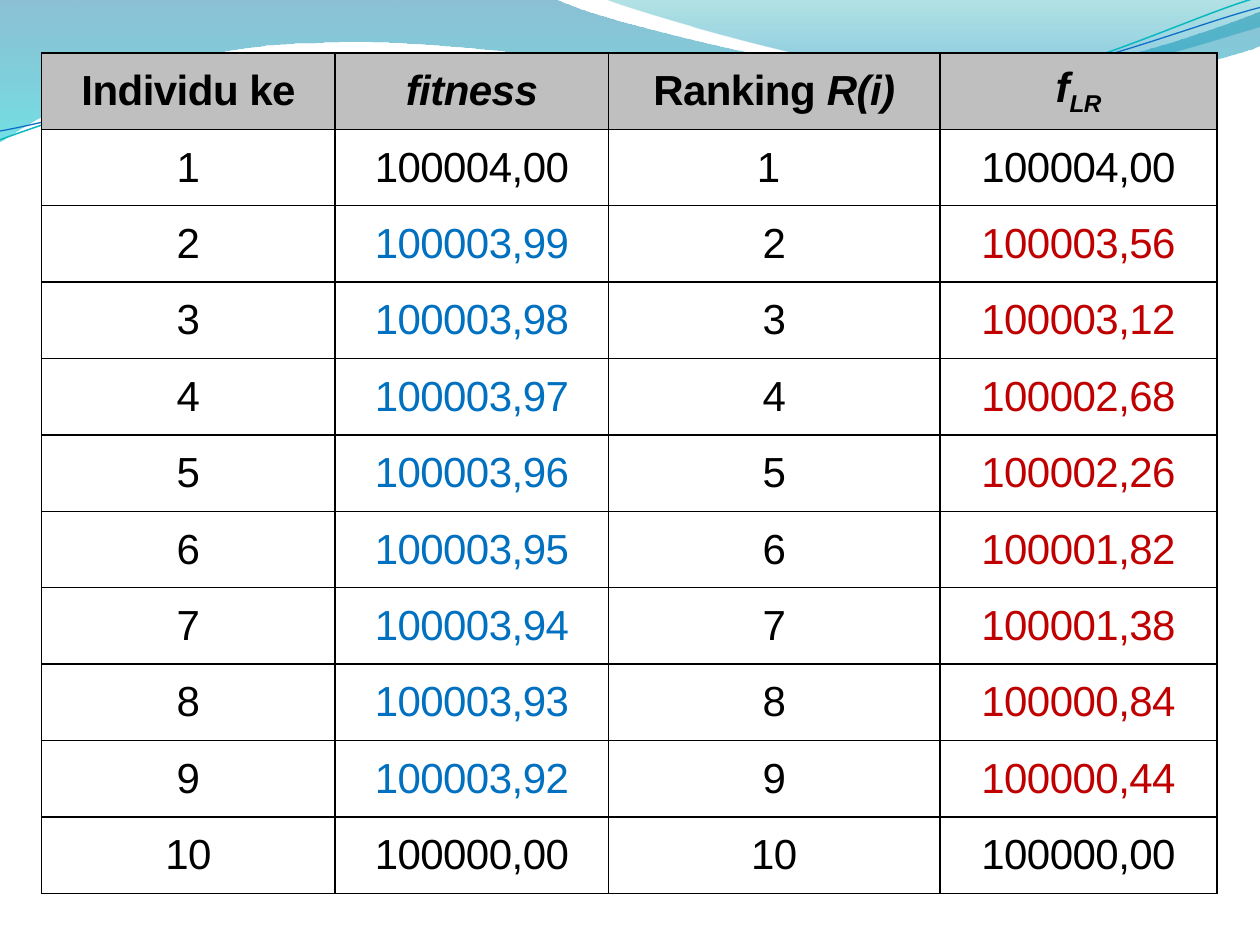
import math

import pptx
import pptx.dml.color
import pptx.enum.text
import pptx.oxml
import pptx.oxml.ns
import pptx.util

RGBColor = pptx.dml.color.RGBColor
BLACK = RGBColor(0x00, 0x00, 0x00)
HEADER_GREY = RGBColor(0xBF, 0xBF, 0xBF)
FITNESS_BLUE = RGBColor(0x00, 0x70, 0xC0)
RANKING_RED = RGBColor(0xC0, 0x00, 0x00)
DEEP_BLUE = RGBColor(0x00, 0x74, 0xA1)
CYAN = RGBColor(0x00, 0xC6, 0xCF)
TEAL = RGBColor(0x00, 0xA1, 0xA9)
SKY = RGBColor(0x00, 0x8B, 0xBF)
LINE_TEAL = RGBColor(0x0A, 0xB8, 0xBF)
LINE_BLUE = RGBColor(0x0F, 0x6F, 0xC6)

GRID = pptx.util.Inches(1)
SLIDE_COLUMNS, SLIDE_ROWS = 10, 7.5
FINENESS = 1000
STROKE_TILT = 2.7

LEFT_WAVE = [
    (0, -0.01), (4.4, -0.01),
    (4.76, 0.17, 6.64, 0.63, 7.58, 0.63), (8.53, 0.63, 9.58, 0.26, 10, 0.09),
    (10.01, 0.36),
    (9.83, 0.44, 8.7, 0.76, 7.46, 0.75), (6.22, 0.75, 3.82, 0.28, 2.57, 0.34),
    (1.29, 0.35, 0.46, 0.83, -0.01, 1.13),
]
RIGHT_WAVE = [
    (4.79, -0.01),
    (5.09, 0.11, 6.82, 0.62, 7.69, 0.65), (8.56, 0.69, 9.61, 0.32, 10, 0.21),
    (10, 0),
]
TEAL_STROKE = [
    (0, 1.11),
    (0.48, 0.93, 1.58, 0.57, 2.77, 0.52), (3.95, 0.47, 5.93, 0.89, 7.13, 0.8),
    (8.33, 0.71, 9.38, 0.15, 9.98, -0.02),
]
BLUE_STROKE = [
    (0, 1.04),
    (0.47, 0.96, 1.64, 0.61, 2.83, 0.56), (4.03, 0.51, 5.97, 0.83, 7.17, 0.75),
    (8.36, 0.67, 9.41, 0.21, 10, 0.06),
]

COLUMN_WIDTHS = [2.33, 2.17, 2.63, 2.2]
HEADINGS = [
    [("Individu ke", False, 0)],
    [("fitness", True, 0)],
    [("Ranking ", False, 0), ("R(i)", True, 0)],
    [("f", True, 0), ("LR", True, -25)],
]
FITNESS = ["100004,00", "100003,99", "100003,98", "100003,97", "100003,96",
           "100003,95", "100003,94", "100003,93", "100003,92", "100000,00"]
LINEAR_RANKING = ["100004,00", "100003,56", "100003,12", "100002,68", "100002,26",
                  "100001,82", "100001,38", "100000,84", "100000,44", "100000,00"]


def turn(point, center, degrees):
    angle = math.radians(degrees)
    across, down = point[0] - center[0], point[1] - center[1]
    return (center[0] + across * math.cos(angle) - down * math.sin(angle),
            center[1] + across * math.sin(angle) + down * math.cos(angle))


def draw_outline(slide, box, outline, closed, tilt=0, center=(0, 0)):
    left, top, width, _ = box
    unit = width / SLIDE_COLUMNS
    points = [turn(segment[i:i + 2], center, tilt)
              for segment in outline for i in range(0, len(segment), 2)]
    points = [((left + x * unit) * FINENESS, (top + y * unit) * FINENESS) for x, y in points]
    builder = slide.shapes.build_freeform(*points[0], scale=GRID / FINENESS)
    builder.add_line_segments(points[1:], close=closed)
    shape = builder.convert_to_shape()
    shape.shadow.inherit = False
    shape.rotation = -tilt
    bend_segments(shape, outline)
    return shape


def bend_segments(shape, outline):
    straight = iter(list(shape.element.spPr.iter(pptx.oxml.ns.qn("a:lnTo"))))
    for segment in outline[1:]:
        pieces = [next(straight) for _ in range(len(segment) // 2)]
        if len(pieces) == 1:
            continue
        curve = pptx.oxml.parse_xml(f'<a:cubicBezTo {pptx.oxml.ns.nsdecls("a")}/>')
        pieces[0].addprevious(curve)
        for piece in pieces:
            curve.append(piece[0])
            piece.getparent().remove(piece)


def add_wave(slide, box, outline, stops):
    wave = draw_outline(slide, box, outline, True)
    wave.line.fill.background()
    wave.fill.gradient()
    wave.fill.gradient_angle = 270
    for stop, (position, color, _) in zip(wave.fill.gradient_stops, stops):
        stop.position = position
        stop.color.rgb = color
    colors = list(wave.element.spPr.iter(pptx.oxml.ns.qn("a:srgbClr")))
    for color, (_, _, opacity) in zip(colors, stops):
        color.append(pptx.oxml.parse_xml(
            f'<a:alpha {pptx.oxml.ns.nsdecls("a")} val="{opacity * 1000}"/>'))


def add_stroke(slide, box, outline, center, color, width):
    stroke = draw_outline(slide, box, outline, False, STROKE_TILT, center)
    stroke.fill.background()
    stroke.line.color.rgb = color
    stroke.line.width = pptx.util.Pt(width)


def add_banner(slide, box):
    add_wave(slide, box, LEFT_WAVE, [(0, DEEP_BLUE, 45), (1, CYAN, 55)])
    add_wave(slide, box, RIGHT_WAVE, [(0, TEAL, 30), (0.8, SKY, 45)])
    add_stroke(slide, box, TEAL_STROKE, (4.99, 0.58), LINE_TEAL, 0.85)
    add_stroke(slide, box, BLUE_STROKE, (5, 0.59), LINE_BLUE, 0.75)


def add_borders(cell):
    properties = cell._tc.get_or_add_tcPr()
    for index, side in enumerate(("lnL", "lnR", "lnT", "lnB")):
        properties.insert(index, pptx.oxml.parse_xml(
            f'<a:{side} {pptx.oxml.ns.nsdecls("a")} w="12700"><a:solidFill>'
            f'<a:srgbClr val="{BLACK}"/></a:solidFill></a:{side}>'))


def fill_cell(cell, parts, color, heading):
    cell.vertical_anchor = pptx.enum.text.MSO_ANCHOR.MIDDLE
    cell.margin_left = cell.margin_right = int(0.07 * GRID)
    cell.margin_top = cell.margin_bottom = 0
    if heading:
        cell.fill.solid()
        cell.fill.fore_color.rgb = HEADER_GREY
    else:
        cell.fill.background()
    add_borders(cell)
    paragraph = cell.text_frame.paragraphs[0]
    paragraph.alignment = pptx.enum.text.PP_ALIGN.CENTER
    paragraph.space_before = pptx.util.Pt(3)
    for text, italic, baseline in parts:
        run = paragraph.add_run()
        run.text = text
        run.font.name = "Arial"
        run.font.size = pptx.util.Pt(24)
        run.font.bold = heading
        run.font.italic = italic
        run.font.color.rgb = color
        properties = run._r.get_or_add_rPr()
        properties.set("spc", "-30")
        if baseline:
            properties.set("baseline", str(baseline * 1000))


def add_ranking_table(slide, box):
    count = len(FITNESS)
    table = slide.shapes.add_table(
        count + 1, len(COLUMN_WIDTHS), *(int(length * GRID) for length in box)).table
    table.first_row = table.horz_banding = False
    for column, share in zip(table.columns, COLUMN_WIDTHS):
        column.width = int(box[2] * share / sum(COLUMN_WIDTHS) * GRID)
    for cell, parts in zip(table.rows[0].cells, HEADINGS):
        fill_cell(cell, parts, BLACK, True)
    for number, (fitness, ranked) in enumerate(zip(FITNESS, LINEAR_RANKING), 1):
        extreme = number in (1, count)
        rank = "1 " if number == 1 else str(number)
        texts = [str(number), fitness, rank, ranked]
        colors = [BLACK] * 4 if extreme else [BLACK, FITNESS_BLUE, BLACK, RANKING_RED]
        for cell, text, color in zip(table.rows[number].cells, texts, colors):
            fill_cell(cell, [(text, False, 0)], color, False)


def main():
    presentation = pptx.Presentation()
    presentation.slide_width = int(SLIDE_COLUMNS * GRID)
    presentation.slide_height = int(SLIDE_ROWS * GRID)
    slide = presentation.slides.add_slide(presentation.slide_layouts[6])
    add_banner(slide, (0, 0, SLIDE_COLUMNS, 1.13))
    add_ranking_table(slide, (0.33, 0.42, 9.33, 6.67))
    presentation.save("out.pptx")


if __name__ == "__main__":
    main()
